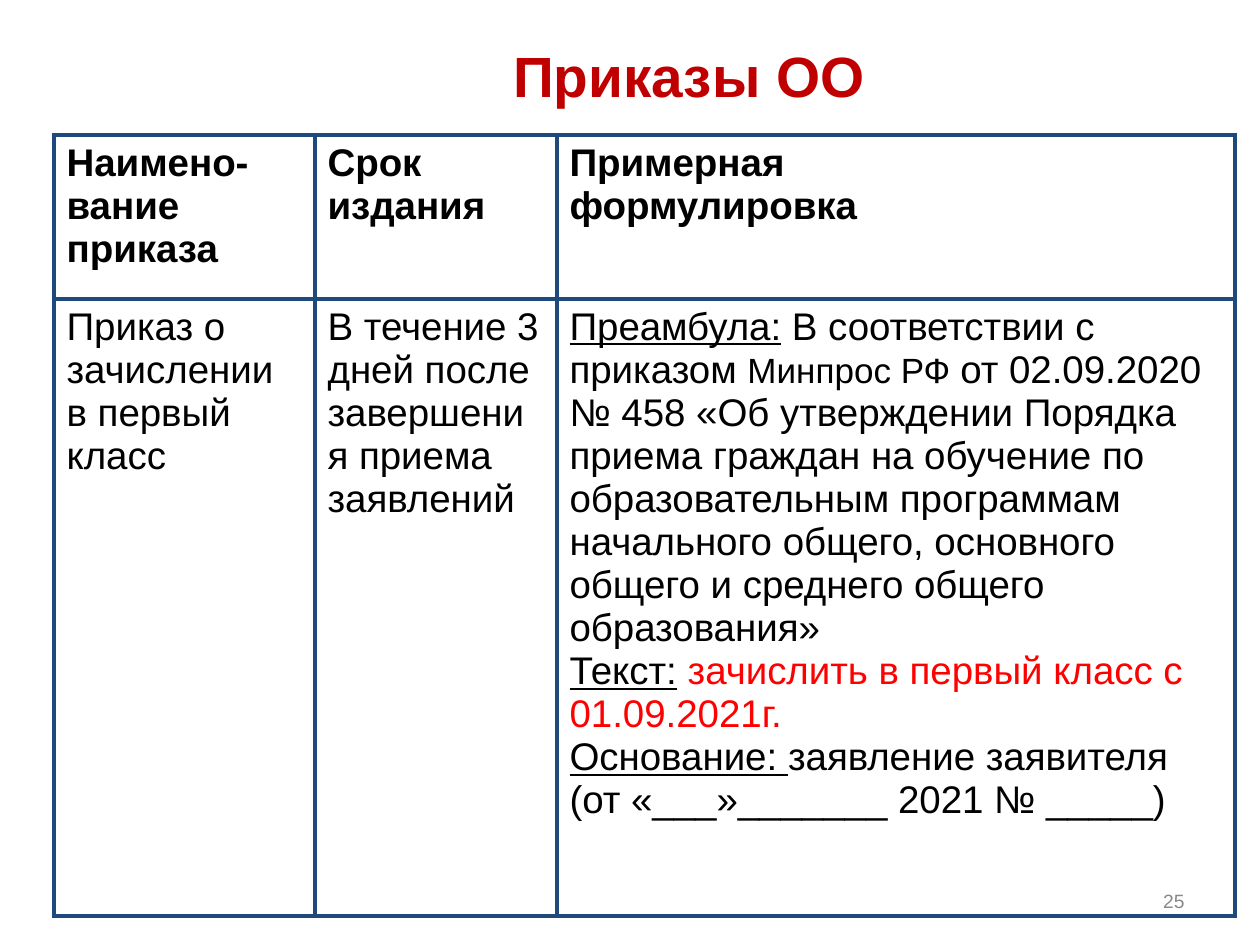
import lxml.etree
import pptx
import pptx.dml.color
import pptx.enum.text
import pptx.oxml.ns
import pptx.util

RGBColor = pptx.dml.color.RGBColor
Align = pptx.enum.text.PP_ALIGN
Anchor = pptx.enum.text.MSO_ANCHOR

CRIMSON = RGBColor(0xC0, 0x00, 0x00)
NAVY = RGBColor(0x1F, 0x49, 0x7D)
BLACK = RGBColor(0x00, 0x00, 0x00)
RED = RGBColor(0xFF, 0x00, 0x00)
GRAY = RGBColor(0x89, 0x89, 0x89)
WHITE = RGBColor(0xFF, 0xFF, 0xFF)

PX_PER_INCH = 126
FONT = "Arial"
BORDER_PT = 3

COLUMNS = [261, 242, 678]
ROWS = [164, 617]
UNDERLINED = {"underline": True}

# Each cell is a list of paragraphs, each paragraph a list of (text, format) runs
HEADER = [
    [[("Наимено-вание приказа", {})]],
    [[("Срок издания", {})]],
    [[("Примерная", {})], [("формулировка", {})]],
]
ORDER = [
    [[("Приказ о зачислении в первый класс", {})]],
    [[("В течение 3 дней после завершения приема заявлений", {})]],
    [
        [
            ("Преамбула:", UNDERLINED),
            (" В соответствии с приказом ", {}),
            ("Минпрос РФ ", {"size": 20}),
            ("от 02.09.2020 № 458 «Об утверждении Порядка приема граждан "
             "на обучение по образовательным программам начального общего, "
             "основного общего и среднего общего образования»", {}),
        ],
        [
            ("Текст:", UNDERLINED),
            (" ", {}),
            ("зачислить в первый класс с 01.09.2021г.", {"color": RED}),
        ],
        [
            ("Основание: ", UNDERLINED),
            ("заявление заявителя (от «___»_______ 2021 № _____)", {}),
        ],
    ],
]


def px(length):
    return pptx.util.Emu(round(length * 914400 / PX_PER_INCH))


def add_run(paragraph, text, size, color, **formats):
    run = paragraph.add_run()
    run.text = text
    values = {"name": FONT, "size": pptx.util.Pt(size), **formats}
    for attribute, value in values.items():
        setattr(run.font, attribute, value)
    run.font.color.rgb = color


def place(shape, box):
    for attribute, length in zip(("left", "top", "width", "height"), box):
        setattr(shape, attribute, px(length))


def format_frame(frame, **formats):
    values = {"word_wrap": True,
              "auto_size": pptx.enum.text.MSO_AUTO_SIZE.NONE,
              "vertical_anchor": Anchor.MIDDLE, **formats}
    for attribute, value in values.items():
        setattr(frame, attribute, value)


def add_heading(slide, box):
    heading = slide.shapes.title
    place(heading, box)
    format_frame(heading.text_frame, margin_top=0, margin_bottom=0)
    paragraph = heading.text_frame.paragraphs[0]
    paragraph.alignment = Align.CENTER
    add_run(paragraph, "Приказы ОО", 32.4, CRIMSON, bold=True)


def add_borders(cell):
    properties = cell._tc.get_or_add_tcPr()
    for side in ("a:lnL", "a:lnR", "a:lnT", "a:lnB"):
        line = lxml.etree.SubElement(properties, pptx.oxml.ns.qn(side),
                                     w=str(pptx.util.Pt(BORDER_PT)))
        fill = lxml.etree.SubElement(line, pptx.oxml.ns.qn("a:solidFill"))
        lxml.etree.SubElement(fill, pptx.oxml.ns.qn("a:srgbClr"), val=str(NAVY))


def fill_cell(cell, paragraphs, bold):
    add_borders(cell)
    cell.fill.solid()
    cell.fill.fore_color.rgb = WHITE
    frame = cell.text_frame
    for index, runs in enumerate(paragraphs):
        paragraph = frame.add_paragraph() if index else frame.paragraphs[0]
        for text, formats in runs:
            add_run(paragraph, text,
                    **{"size": 22, "color": BLACK, "bold": bold, **formats})


def add_orders_table(slide, left, top):
    orders = slide.shapes.add_table(
        len(ROWS), len(COLUMNS), px(left), px(top),
        px(sum(COLUMNS)), px(sum(ROWS))).table
    orders.first_row = orders.horz_banding = False
    for column, width in zip(orders.columns, COLUMNS):
        column.width = px(width)
    for row, height in zip(orders.rows, ROWS):
        row.height = px(height)
    for row_index, contents in enumerate((HEADER, ORDER)):
        for column_index, paragraphs in enumerate(contents):
            fill_cell(orders.cell(row_index, column_index), paragraphs,
                      bold=row_index == 0)


def add_page_number(slide, box):
    page_number = slide.shapes.add_textbox(*map(px, box))
    format_frame(page_number.text_frame)
    paragraph = page_number.text_frame.paragraphs[0]
    paragraph.alignment = Align.RIGHT
    add_run(paragraph, "25", 11, GRAY)


def main():
    deck = pptx.Presentation()
    deck.slide_width = px(1260)
    deck.slide_height = px(945)
    slide = deck.slides.add_slide(deck.slide_layouts[5])

    add_heading(slide, (292, 36, 794, 77))
    add_orders_table(slide, 54, 135)
    add_page_number(slide, (903, 876, 294, 50))

    deck.save("out.pptx")


if __name__ == "__main__":
    main()
